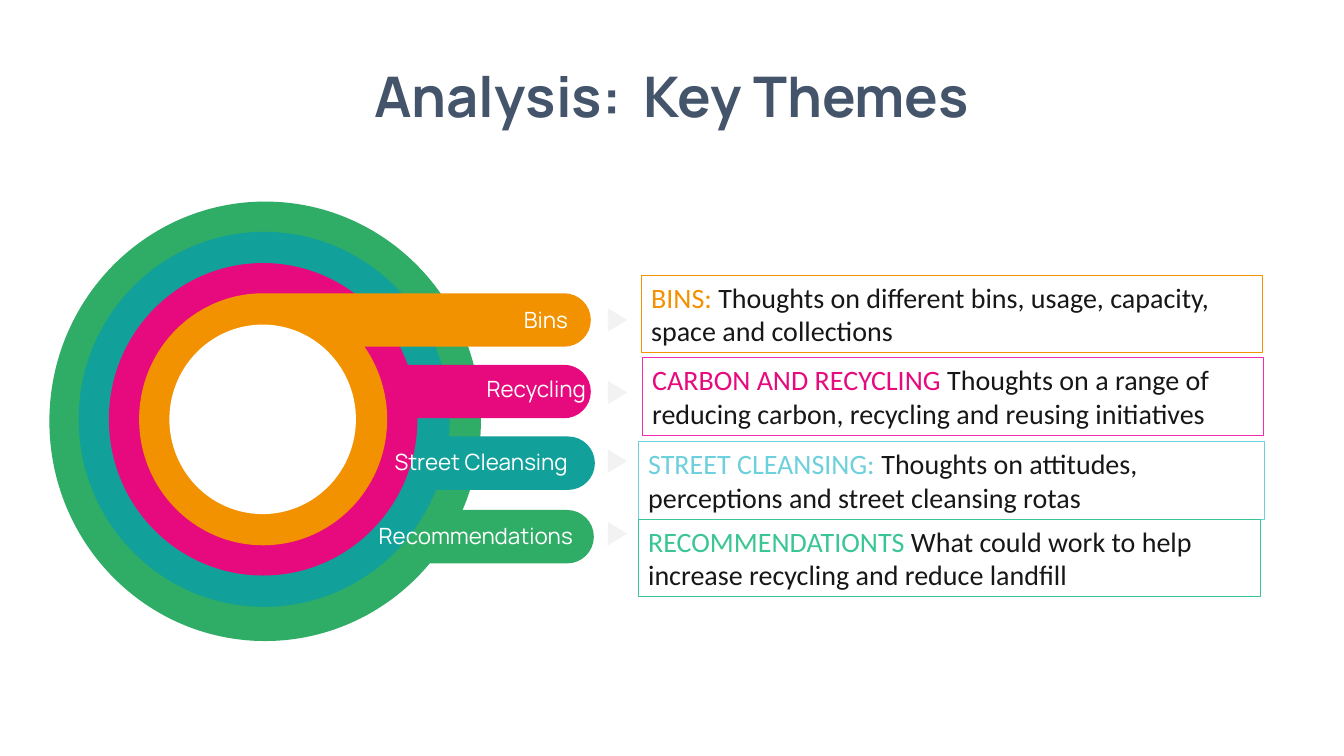
from dataclasses import dataclass
from math import asin, ceil, cos, floor, pi, sin, tan
from typing import NamedTuple

from lxml import etree
from pptx import Presentation
from pptx.dml.color import RGBColor
from pptx.enum.shapes import MSO_SHAPE as Shape
from pptx.enum.text import MSO_ANCHOR as Anchor, MSO_AUTO_SIZE as AutoSize, PP_ALIGN as Align
from pptx.oxml.ns import qn
from pptx.util import Inches, Pt

GREEN = RGBColor(0x2F, 0xAC, 0x66)
TEAL = RGBColor(0x12, 0xA1, 0x9A)
PINK = RGBColor(0xE6, 0x0A, 0x7E)
ORANGE = RGBColor(0xF3, 0x92, 0x00)
MAGENTA = RGBColor(0xF3, 0x2B, 0xAC)
SKY = RGBColor(0x6D, 0xD0, 0xDD)
MINT = RGBColor(0x3A, 0xC6, 0x94)
SLATE = RGBColor(0x44, 0x54, 0x6A)
INK = RGBColor(0x18, 0x17, 0x17)
GREY = RGBColor(0xF2, 0xF2, 0xF2)
WHITE = RGBColor(0xFF, 0xFF, 0xFF)

HEAD_FONT, BODY_FONT = "Manrope", "Calibri"
BAR_H = 0.53
BOX_H = 0.77


class Point(NamedTuple):
    x: int
    y: int


@dataclass
class Ring:
    cx: float
    cy: float
    rx: float
    ry: float
    bar_top: float
    bar_right: float
    color: RGBColor


@dataclass
class Theme:
    ring: Ring
    label: str
    label_at: tuple[float, float, float, float]
    heading: str
    detail: str
    box_at: tuple[float, float, float]
    heading_color: RGBColor
    line_color: RGBColor
    arrow_top: float


THEMES = [
    Theme(Ring(2.61, 4.16, 1.23, 1.25, 2.91, 5.86, ORANGE),
          "Bins", (4.02, 2.99, 1.71, 0.4),
          "BINS: ", "Thoughts on different bins, usage, capacity, space and collections",
          (6.36, 2.73, 6.16), ORANGE, ORANGE, 3.08),
    Theme(Ring(2.61, 4.16, 1.53, 1.55, 3.62, 5.86, PINK),
          "Recycling", (3.32, 3.67, 2.59, 0.37),
          "CARBON AND RECYCLING ",
          "Thoughts on a range of reducing carbon, recycling and reusing initiatives",
          (6.37, 3.55, 6.16), PINK, MAGENTA, 3.8),
    Theme(Ring(2.62, 4.16, 1.84, 1.86, 4.33, 5.9, TEAL),
          "Street Cleansing", (3.38, 4.4, 2.35, 0.4),
          "STREET CLEANSING: ", "Thoughts on attitudes, perceptions and street cleansing rotas",
          (6.33, 4.38, 6.21), SKY, SKY, 4.48),
    Theme(Ring(2.63, 4.18, 2.14, 2.18, 5.06, 5.89, GREEN),
          "Recommendations", (3.19, 5.13, 2.59, 0.4),
          "RECOMMENDATIONTS ", "What could work to help increase recycling and reduce landfill",
          (6.33, 5.15, 6.17), MINT, MINT, 5.2),
]


def add_run(p, text: str, font: str, size: float, color: RGBColor, bold: bool = False) -> None:
    r = p.add_run()
    r.text = text
    r.font.name, r.font.size, r.font.bold = font, Pt(size), bold
    r.font.color.rgb = color


def paint(sp, color: RGBColor) -> None:
    sp.shadow.inherit = False
    sp.fill.solid()
    sp.fill.fore_color.rgb = color
    sp.line.fill.background()


def arc(cx: float, cy: float, rx: float, ry: float,
        start: float, end: float) -> list[list[Point]]:
    """Return Bezier curves, split where the arc crosses an axis."""
    def at(x: float, y: float) -> Point:
        return Point(Inches(cx + rx * x), Inches(cy + ry * y))

    quarter = pi / 2
    crossings = range(floor(start / quarter) + 1, ceil(end / quarter))
    angles = [start, *(i * quarter for i in crossings), end]
    curves = []
    for a, b in zip(angles, angles[1:]):
        k = 4 / 3 * tan((b - a) / 4)
        curves.append([at(cos(a), sin(a)),
                       at(cos(a) - k * sin(a), sin(a) + k * cos(a)),
                       at(cos(b) + k * sin(b), sin(b) - k * cos(b)),
                       at(cos(b), sin(b))])
    return curves


def add_ring(shapes, ring: Ring) -> None:
    """Draw a disc joined to a bar with a round right end."""
    top, bottom = (asin(max(-1, (y - ring.cy) / ring.ry))
                   for y in (ring.bar_top, ring.bar_top + BAR_H))
    radius = BAR_H / 2
    disc = arc(ring.cx, ring.cy, ring.rx, ring.ry, bottom, top + 2 * pi)
    cap = arc(ring.bar_right - radius, ring.bar_top + radius, radius, radius, -pi / 2, pi / 2)
    edge = [c[1:] for c in disc] + [[cap[0][0]]] + [c[1:] for c in cap]

    builder = shapes.build_freeform(*disc[0][0])
    builder.add_line_segments([step[-1] for step in edge], close=True)
    sp = builder.convert_to_shape()
    paint(sp, ring.color)

    # Bend the straight segments into curves
    lines = list(sp._element.iter(qn("a:lnTo")))
    for line, step in zip(lines, edge):
        if len(step) == 3:
            curve = etree.Element(qn("a:cubicBezTo"))
            for pt in step:
                etree.SubElement(curve, qn("a:pt"), x=str(pt.x - sp.left), y=str(pt.y - sp.top))
            line.getparent().replace(line, curve)


def add_label(shapes, theme: Theme) -> None:
    tf = shapes.add_textbox(*map(Inches, theme.label_at)).text_frame
    tf.word_wrap = True
    p = tf.paragraphs[0]
    p.alignment = Align.RIGHT
    add_run(p, theme.label, HEAD_FONT, 16, WHITE)


def add_box(shapes, theme: Theme) -> None:
    left, top, width = theme.box_at
    sp = shapes.add_shape(Shape.RECTANGLE, *map(Inches, (left, top, width, BOX_H)))
    sp.shadow.inherit = False
    sp.fill.background()
    sp.line.color.rgb = theme.line_color
    sp.line.width = Pt(0.75)
    tf = sp.text_frame
    tf.word_wrap = True
    tf.vertical_anchor = Anchor.TOP
    p = tf.paragraphs[0]
    p.alignment = Align.LEFT
    add_run(p, theme.heading, BODY_FONT, 20, theme.heading_color)
    add_run(p, theme.detail, BODY_FONT, 20, INK)


def add_arrow(shapes, top: float) -> None:
    sp = shapes.add_shape(Shape.ISOSCELES_TRIANGLE, *map(Inches, (6.01, top, 0.23, 0.19)))
    sp.rotation = 90
    paint(sp, GREY)


def add_title(s) -> None:
    title = s.shapes.title
    title.left, title.top, title.width, title.height = map(Inches, (3.36, 0.56, 6.6, 0.77))
    tf = title.text_frame
    tf.word_wrap = False
    tf.auto_size = AutoSize.NONE
    tf.vertical_anchor = Anchor.MIDDLE
    p = tf.paragraphs[0]
    p.alignment = Align.CENTER
    add_run(p, "Analysis:  Key Themes", HEAD_FONT, 40, SLATE, bold=True)


def main() -> None:
    prs = Presentation()
    prs.slide_width, prs.slide_height = Inches(13.33), Inches(7.5)
    s = prs.slides.add_slide(prs.slide_layouts[5])
    add_title(s)

    # Nested rings, largest first, with a white centre
    for theme in reversed(THEMES):
        add_ring(s.shapes, theme.ring)
    centre = s.shapes.add_shape(Shape.OVAL, *map(Inches, (1.68, 3.22, 1.85, 1.88)))
    paint(centre, WHITE)

    # Bar labels, descriptions and arrows
    for theme in THEMES:
        add_label(s.shapes, theme)
        add_box(s.shapes, theme)
        add_arrow(s.shapes, theme.arrow_top)

    prs.save("out.pptx")


if __name__ == "__main__":
    main()
